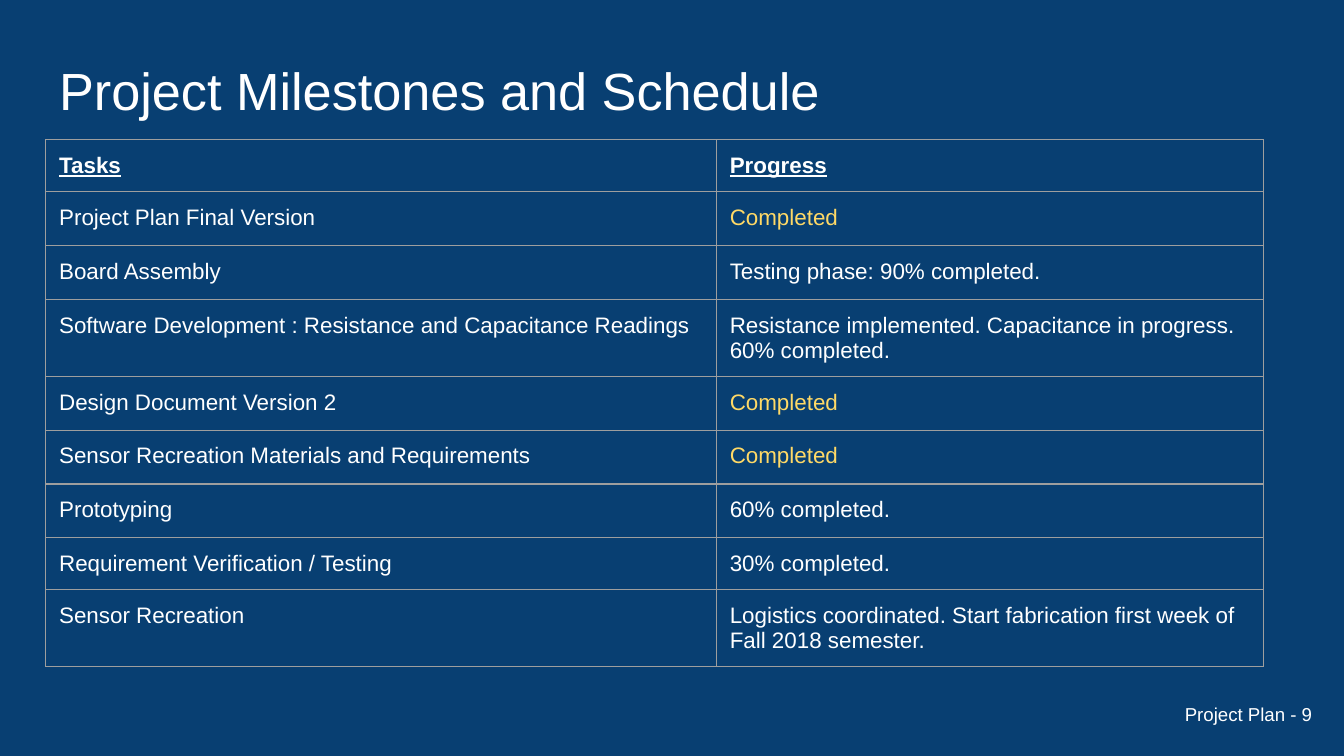
from typing import NamedTuple

from lxml.etree import SubElement
from pptx import Presentation
from pptx.dml.color import RGBColor
from pptx.enum.text import MSO_ANCHOR as Anchor, MSO_AUTO_SIZE as AutoSize, PP_ALIGN as Align
from pptx.oxml.ns import qn
from pptx.slide import Slide
from pptx.table import _Cell as Cell
from pptx.text.text import TextFrame
from pptx.util import Inches, Pt

COLORS = {
    "background": "083F72",
    "text": "FFFFFF",
    "done": "FFD966",
    "border": "9E9E9E",
}
FONT = "Arial"
INSET = Inches(0.1)
COLUMN_WIDTHS = (4.99, 4.07)
ROW_HEIGHTS = (0.37, *[0.4] * 6, 0.37, 0.37)


class Milestone(NamedTuple):
    task: str
    progress: str


HEADER = Milestone("Tasks", "Progress")
MILESTONES = [
    Milestone("Project Plan Final Version", "Completed"),
    Milestone("Board Assembly", "Testing phase: 90% completed."),
    Milestone(
        "Software Development : Resistance and Capacitance Readings",
        "Resistance implemented. Capacitance in progress. 60% completed.",
    ),
    Milestone("Design Document Version 2", "Completed"),
    Milestone("Sensor Recreation Materials and Requirements", "Completed"),
    Milestone("Prototyping", "60% completed."),
    Milestone("Requirement Verification / Testing", "30% completed."),
    Milestone(
        "Sensor Recreation",
        "Logistics coordinated. Start fabrication first week of Fall 2018 semester.",
    ),
]


def write_text(frame: TextFrame, text: str, size: float, color: str = "text",
               align: Align = Align.LEFT, heading: bool = False) -> None:
    frame.text = text
    paragraph = frame.paragraphs[0]
    paragraph.alignment = align
    font = paragraph.runs[0].font
    font.name, font.size = FONT, Pt(size)
    font.bold = font.underline = heading
    font.color.rgb = RGBColor.from_string(COLORS[color])


def set_frame(frame: TextFrame, anchor: Anchor) -> None:
    frame.word_wrap = True
    frame.auto_size = AutoSize.NONE
    frame.vertical_anchor = anchor
    frame.margin_left = frame.margin_right = INSET
    frame.margin_top = frame.margin_bottom = INSET


def add_borders(cell: Cell) -> None:
    properties = cell._tc.get_or_add_tcPr()
    for side in ("a:lnL", "a:lnR", "a:lnT", "a:lnB"):
        line = SubElement(properties, qn(side), w=str(Pt(0.75)))
        fill = SubElement(line, qn("a:solidFill"))
        SubElement(fill, qn("a:srgbClr"), val=COLORS["border"])


def format_cell(cell: Cell, text: str, heading: bool) -> None:
    color = "done" if text == "Completed" else "text"
    write_text(cell.text_frame, text, 12, color, heading=heading)
    cell.margin_left = cell.margin_right = INSET
    cell.margin_top = cell.margin_bottom = INSET
    cell.vertical_anchor = Anchor.TOP
    add_borders(cell)
    cell.fill.background()


def add_title(slide: Slide, text: str) -> None:
    title = slide.shapes.title
    title.left, title.top = Inches(0.34), Inches(0.33)
    title.width, title.height = Inches(9.32), Inches(0.63)
    set_frame(title.text_frame, Anchor.TOP)
    write_text(title.text_frame, text, 28)


def add_schedule(slide: Slide) -> None:
    rows = [HEADER, *MILESTONES]
    table = slide.shapes.add_table(
        len(rows), len(COLUMN_WIDTHS), Inches(0.34), Inches(1.04),
        Inches(sum(COLUMN_WIDTHS)), Inches(sum(ROW_HEIGHTS)),
    ).table
    table.first_row = table.horz_banding = False
    for column, width in zip(table.columns, COLUMN_WIDTHS):
        column.width = Inches(width)
    for row, height, milestone in zip(table.rows, ROW_HEIGHTS, rows):
        row.height = Inches(height)
        for cell, text in zip(row.cells, milestone):
            format_cell(cell, text, heading=milestone is HEADER)


def add_footer(slide: Slide, text: str) -> None:
    footer = slide.shapes.add_textbox(Inches(7.49), Inches(5.1), Inches(2.37), Inches(0.43))
    set_frame(footer.text_frame, Anchor.MIDDLE)
    write_text(footer.text_frame, text, 10, align=Align.RIGHT)


def main() -> None:
    """Build the project milestones slide."""
    presentation = Presentation()
    presentation.slide_width = Inches(10)
    presentation.slide_height = presentation.slide_width * 9 // 16
    slide = presentation.slides.add_slide(presentation.slide_layouts.get_by_name("Title Only"))
    background = slide.background.fill
    background.solid()
    background.fore_color.rgb = RGBColor.from_string(COLORS["background"])
    add_title(slide, "Project Milestones and Schedule")
    add_footer(slide, "Project Plan - 9")
    add_schedule(slide)
    presentation.save("out.pptx")


if __name__ == "__main__":
    main()
